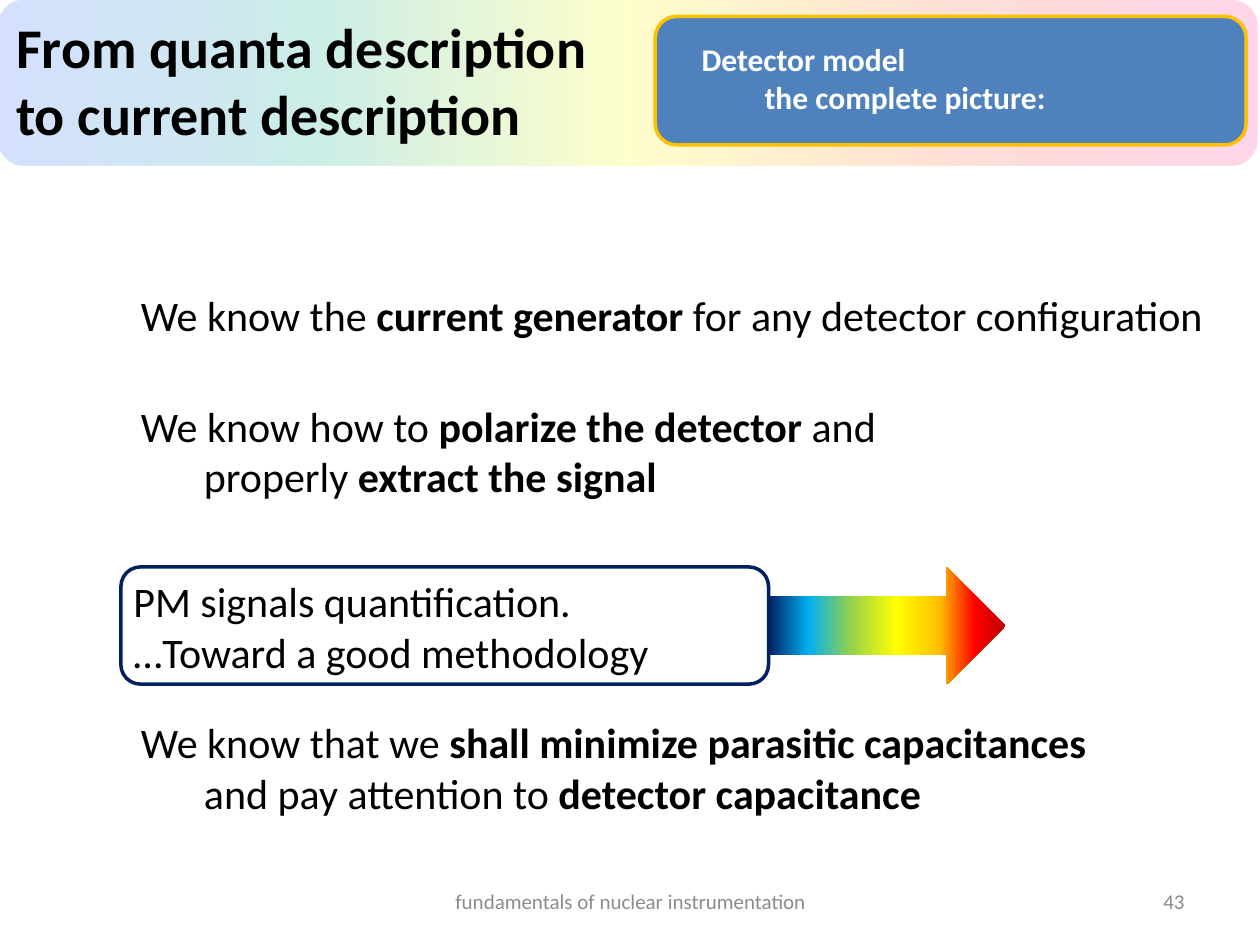
import lxml.etree
import pptx
import pptx.dml.color
import pptx.enum.shapes
import pptx.enum.text
import pptx.oxml.ns
import pptx.util

Pt = pptx.util.Pt
RGBColor = pptx.dml.color.RGBColor
SHAPE = pptx.enum.shapes.MSO_SHAPE
ALIGN = pptx.enum.text.PP_ALIGN
ANCHOR = pptx.enum.text.MSO_ANCHOR
qn = pptx.oxml.ns.qn

BLACK = RGBColor(0x00, 0x00, 0x00)
WHITE = RGBColor(0xFF, 0xFF, 0xFF)
GRAY = RGBColor(0x8C, 0x8C, 0x8C)
NAVY = RGBColor(0x00, 0x20, 0x60)
BLUE = RGBColor(0x4F, 0x81, 0xBD)
AMBER = RGBColor(0xFF, 0xC0, 0x00)
PINK = RGBColor(0xFF, 0x33, 0x99)
ORANGE = RGBColor(0xFF, 0x66, 0x33)
YELLOW = RGBColor(0xFF, 0xFF, 0x00)
TEAL = RGBColor(0x01, 0xA7, 0x8F)
ROYAL = RGBColor(0x33, 0x66, 0xFF)
SKY = RGBColor(0x00, 0xB0, 0xF0)
GREEN = RGBColor(0x92, 0xD0, 0x50)
RED = RGBColor(0xFF, 0x00, 0x00)
DARK_RED = RGBColor(0xC0, 0x00, 0x00)

BANNER_STOPS = [(0, PINK), (25, ORANGE), (50, YELLOW), (75, TEAL), (100, ROYAL)]
ARROW_STOPS = [(0, NAVY), (17, SKY), (34, GREEN), (54, YELLOW), (72, AMBER), (87, RED), (100, DARK_RED)]

presentation = pptx.Presentation()
presentation.slide_width = Pt(720)
presentation.slide_height = Pt(540)
slide = presentation.slides.add_slide(presentation.slide_layouts[6])


def add_block(kind, box, fill=None, line=None, stops=(), angle=0, opacity=100):
    block = slide.shapes.add_shape(kind, *map(Pt, box))
    block.shadow.inherit = False
    if stops:
        block.fill.gradient()
        block.fill.gradient_angle = angle
        stop_list = block.fill._fill._gradFill.find(qn("a:gsLst"))
        for old_stop in list(stop_list):
            stop_list.remove(old_stop)
        for position, color in stops:
            stop = lxml.etree.SubElement(stop_list, qn("a:gs"), pos=str(position * 1000))
            tint = lxml.etree.SubElement(stop, qn("a:srgbClr"), val=str(color))
            if opacity < 100:
                lxml.etree.SubElement(tint, qn("a:alpha"), val=str(opacity * 1000))
    else:
        block.fill.solid()
        block.fill.fore_color.rgb = fill
    if line is None:
        block.line.fill.background()
    else:
        block.line.color.rgb = line
        block.line.width = Pt(2)


def add_text(box, lines, size, color=BLACK, bold=False, align=ALIGN.LEFT, anchor=ANCHOR.TOP, wrap=False):
    frame = slide.shapes.add_textbox(*map(Pt, box)).text_frame
    frame.word_wrap = wrap
    frame.vertical_anchor = anchor
    for index, pieces in enumerate(lines):
        paragraph = frame.add_paragraph() if index else frame.paragraphs[0]
        paragraph.alignment = align
        for number, piece in enumerate(pieces):
            run = paragraph.add_run()
            run.text = piece
            run.font.name = "Calibri"
            run.font.size = Pt(size)
            run.font.color.rgb = color
            run.font.bold = bold or number % 2 == 1


add_block(SHAPE.ROUNDED_RECTANGLE, (-1.44, 0, 720, 94.32), stops=BANNER_STOPS, angle=180, opacity=20)
add_block(SHAPE.ROUNDED_RECTANGLE, (69.12, 324, 370.08, 66.96), fill=WHITE, line=NAVY)
add_block(SHAPE.ROUNDED_RECTANGLE, (374.4, 9.36, 337.68, 73.44), fill=BLUE, line=AMBER)
add_block(SHAPE.RIGHT_ARROW, (439.2, 324, 135.36, 66.96), stops=ARROW_STOPS)

add_text((2.16, 3.6, 343.44, 84.96), [["From quanta description"], ["to current description"]], 32, bold=True)
add_text((393.84, 19.44, 249.12, 51.12), [["Detector model"], ["\tthe complete picture:"]], 18, WHITE, bold=True)

statements = [
    (162, 624.24, 36, [["We know the ", "current generator ", "for any detector configuration"]]),
    (225.36, 439.2, 65.52, [["We know how to ", "polarize the detector ", "and"],
                            ["\tproperly ", "extract the signal"]]),
    (406.08, 560.16, 65.52, [["We know that we ", "shall minimize parasitic capacitances"],
                             ["\tand pay attention to ", "detector capacitance"]]),
]
for top, width, height, lines in statements:
    add_text((73.44, top, width, height), lines, 24)

add_text((69.12, 325.44, 311.04, 65.52), [["PM signals quantification."], ["…Toward a good methodology"]], 24)

for left, width, footer, align in [
    (246.24, 228.24, "fundamentals of nuclear instrumentation", ALIGN.CENTER),
    (516.24, 167.76, "43", ALIGN.RIGHT),
]:
    add_text((left, 500.4, width, 28.8), [[footer]], 12, GRAY, align=align, anchor=ANCHOR.MIDDLE, wrap=True)

presentation.save("out.pptx")
